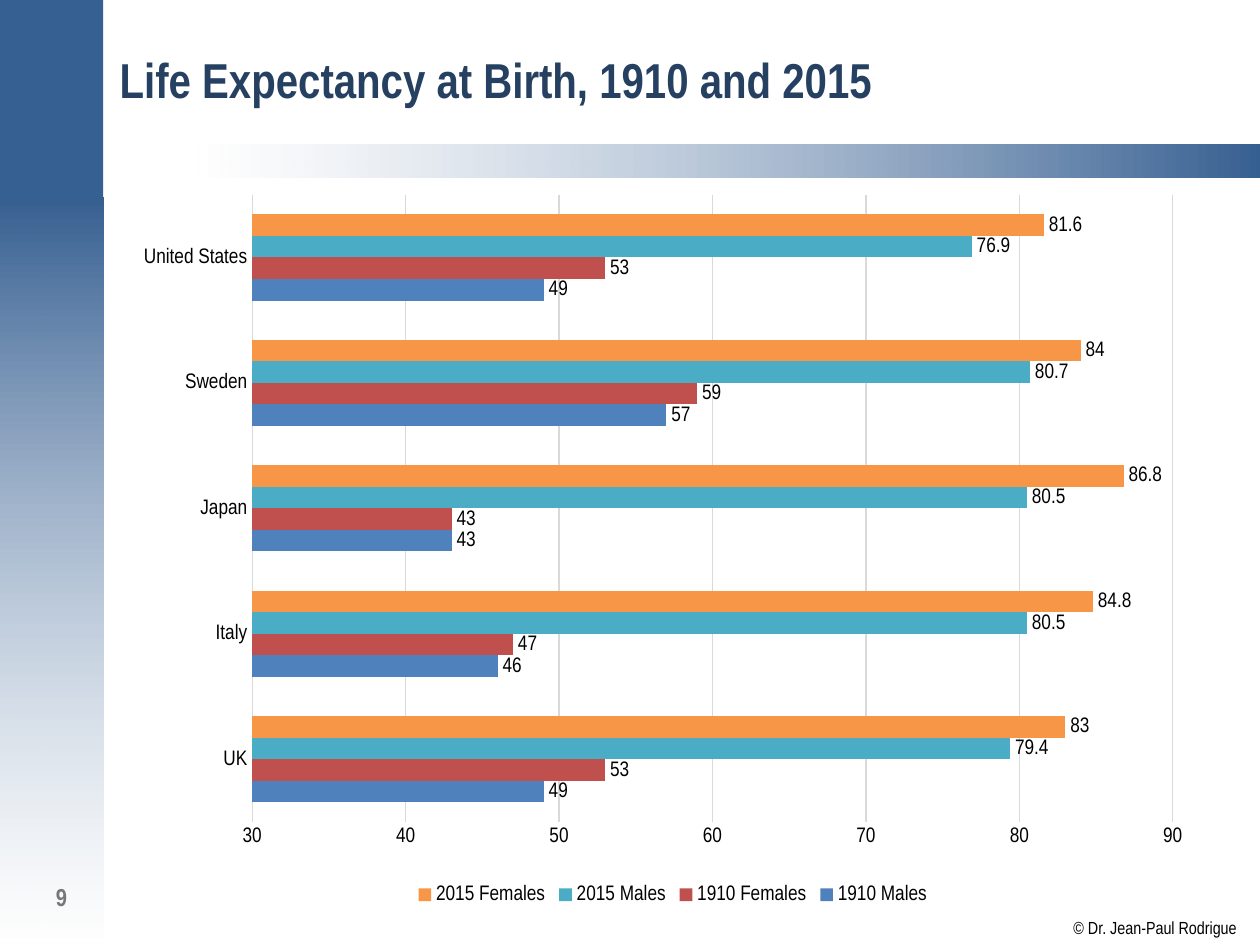
from lxml import etree
from pptx import Presentation
from pptx.chart.data import CategoryChartData
from pptx.dml.color import RGBColor
from pptx.enum.chart import XL_CHART_TYPE as ChartType
from pptx.enum.chart import XL_LABEL_POSITION as LabelPosition
from pptx.enum.chart import XL_LEGEND_POSITION as LegendPosition
from pptx.enum.chart import XL_TICK_MARK as TickMark
from pptx.enum.shapes import MSO_SHAPE as Shape
from pptx.enum.text import MSO_ANCHOR as Anchor
from pptx.enum.text import MSO_AUTO_SIZE as AutoSize
from pptx.enum.text import PP_ALIGN as Align
from pptx.oxml.ns import qn
from pptx.util import Inches, Pt

NAVY = RGBColor(0x25, 0x40, 0x61)
BLUE = RGBColor(0x37, 0x60, 0x92)
WHITE = RGBColor(0xFF, 0xFF, 0xFF)
BLACK = RGBColor(0x00, 0x00, 0x00)
GRAY = RGBColor(0x77, 0x77, 0x77)
GRID = RGBColor(0xD9, 0xD9, 0xD9)

COUNTRIES = ["UK", "Italy", "Japan", "Sweden", "United States"]
LIFE_EXPECTANCY = [
    ("1910 Males", (49, 46, 43, 57, 49), RGBColor(0x4F, 0x81, 0xBD)),
    ("1910 Females", (53, 47, 43, 59, 53), RGBColor(0xC0, 0x50, 0x4D)),
    ("2015 Males", (79.4, 80.5, 80.5, 80.7, 76.9), RGBColor(0x4B, 0xAC, 0xC6)),
    ("2015 Females", (83, 84.8, 86.8, 84, 81.6), RGBColor(0xF7, 0x96, 0x46)),
]


def box(left, top, width, height):
    return Inches(left), Inches(top), Inches(width), Inches(height)


def format_font(font, size, color=BLACK, bold=False):
    font.name = "Arial Narrow"
    font.size = Pt(size)
    font.bold = bold
    font.color.rgb = color


def write_text(frame, text, size, color=BLACK, bold=False, align=Align.LEFT,
               anchor=Anchor.TOP, wrap=True, margins=None):
    frame.word_wrap = wrap
    frame.auto_size = AutoSize.NONE
    frame.vertical_anchor = anchor
    if margins is not None:
        frame.margin_left = frame.margin_right = Inches(margins)
        frame.margin_top = frame.margin_bottom = Inches(margins)
    paragraph = frame.paragraphs[0]
    paragraph.alignment = align
    run = paragraph.add_run()
    run.text = text
    format_font(run.font, size, color, bold)


class SlideBuilder:
    def __init__(self, slide):
        self.slide = slide

    def title(self, text, place):
        title = self.slide.shapes.title
        title.left, title.top, title.width, title.height = place
        write_text(title.text_frame, text, 28, NAVY, bold=True, anchor=Anchor.MIDDLE)

    def text(self, text, place, size, **style):
        label = self.slide.shapes.add_textbox(*place)
        write_text(label.text_frame, text, size, **style)

    def band(self, place):
        band = self.slide.shapes.add_shape(Shape.RECTANGLE, *place)
        band.shadow.inherit = False
        band.line.fill.background()
        band.fill.solid()
        band.fill.fore_color.rgb = BLUE
        return band

    def fading_band(self, place, colors, angle, opacity):
        band = self.band(place)
        band.fill.gradient()
        band.fill.gradient_angle = angle
        for stop, color, position in zip(band.fill.gradient_stops, colors, (0, 1)):
            stop.color.rgb = color
            stop.position = position
        for color in band._element.spPr.iter(qn("a:srgbClr")):
            if color.get("val") == str(WHITE):
                etree.SubElement(color, qn("a:alpha"), val=str(opacity * 1000))

    def bar_chart(self, place, categories, series_rows, plot_area):
        data = CategoryChartData()
        data.categories = categories
        for name, values, _ in series_rows:
            data.add_series(name, values)
        chart = self.slide.shapes.add_chart(
            ChartType.BAR_CLUSTERED, *place, data).chart
        chart.has_title = False
        format_font(chart.font, 10)
        plot = chart.plots[0]
        plot.gap_width = 182
        plot.overlap = 0
        plot.vary_by_categories = False
        for series, (_, _, color) in zip(plot.series, series_rows):
            series.invert_if_negative = False
            series.format.fill.solid()
            series.format.fill.fore_color.rgb = color
            labels = series.data_labels
            labels.show_value = True
            labels.position = LabelPosition.OUTSIDE_END
            format_font(labels.font, 12)
        self.axes(chart)
        chart.has_legend = True
        chart.legend.position = LegendPosition.BOTTOM
        chart.legend.include_in_layout = False
        format_font(chart.legend.font, 12)
        self.plot_layout(chart, plot_area)

    def axes(self, chart):
        for axis in (chart.category_axis, chart.value_axis):
            axis.major_tick_mark = axis.minor_tick_mark = TickMark.NONE
            format_font(axis.tick_labels.font, 12)
        values = chart.value_axis
        values.minimum_scale = 30
        values.maximum_scale = 90
        values.major_unit = 10
        values.has_major_gridlines = True
        values.format.line.fill.background()
        for line in (chart.category_axis.format.line, values.major_gridlines.format.line):
            line.color.rgb = GRID
            line.width = Pt(0.75)

    def plot_layout(self, chart, plot_area):
        area = chart._chartSpace.chart.plotArea
        for old in area.findall(qn("c:layout")):
            area.remove(old)
        layout = etree.Element(qn("c:layout"))
        area.insert(0, layout)
        manual = etree.SubElement(layout, qn("c:manualLayout"))
        settings = [("layoutTarget", "inner"), ("xMode", "edge"), ("yMode", "edge")]
        settings += zip("xywh", plot_area)
        for tag, value in settings:
            etree.SubElement(manual, qn(f"c:{tag}"), val=str(value))


def main():
    deck = Presentation()
    deck.slide_width, deck.slide_height = Inches(10), Inches(7.5)
    builder = SlideBuilder(deck.slides.add_slide(deck.slide_layouts[5]))
    builder.fading_band(box(-0.01, 1.57, 0.83, 5.93), (BLUE, WHITE), 270, 51)
    builder.fading_band(box(1.57, 1.15, 8.43, 0.26), (WHITE, BLUE), 0, 50)
    builder.band(box(-0.01, -0.01, 0.83, 1.58))
    builder.text("© Dr. Jean-Paul Rodrigue", box(8.52, 7.28, 1.3, 0.17), 10,
                 wrap=False, margins=0)
    builder.title("Life Expectancy at Birth, 1910 and 2015", box(0.85, 0.11, 8.98, 1.04))
    builder.bar_chart(box(0.83, 1.43, 9.02, 5.79), COUNTRIES, LIFE_EXPECTANCY,
                      (0.13, 0.02, 0.81, 0.86))
    builder.text("9", box(0.21, 6.95, 0.42, 0.42), 14, color=GRAY, bold=True,
                 align=Align.RIGHT)
    deck.save("out.pptx")


if __name__ == "__main__":
    main()
